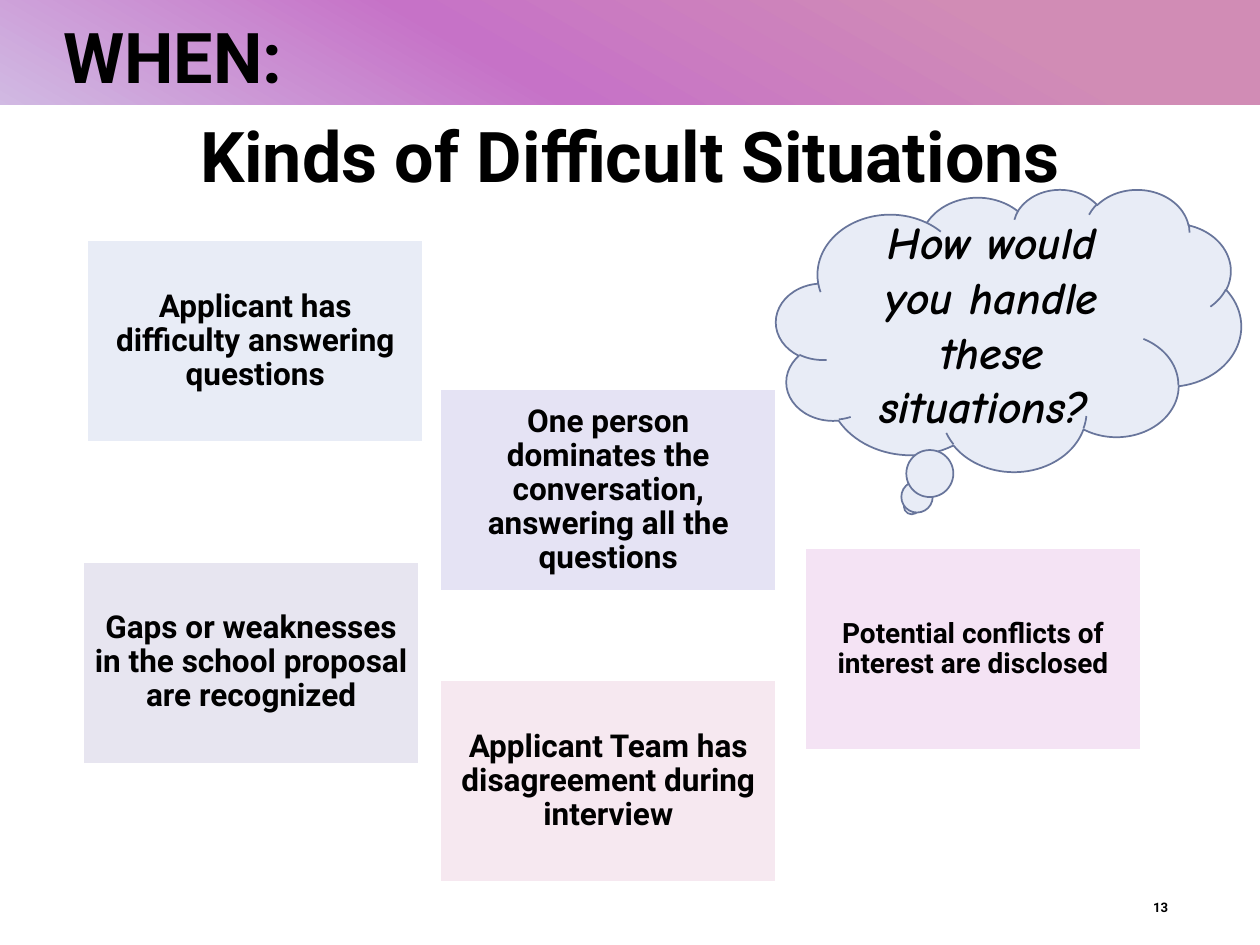
from lxml import etree
from pptx import Presentation
from pptx.dml.color import RGBColor
from pptx.enum.shapes import MSO_SHAPE
from pptx.enum.text import MSO_ANCHOR, MSO_AUTO_SIZE, PP_ALIGN
from pptx.oxml.ns import qn
from pptx.util import Pt

RECT = MSO_SHAPE.RECTANGLE
CLOUD = MSO_SHAPE.CLOUD_CALLOUT
TOP, MIDDLE = MSO_ANCHOR.TOP, MSO_ANCHOR.MIDDLE
LEFT, CENTER, RIGHT = PP_ALIGN.LEFT, PP_ALIGN.CENTER, PP_ALIGN.RIGHT
NO_FIT = MSO_AUTO_SIZE.NONE

WIDTH, HEIGHT = 720, 540
BAND_HEIGHT = 60
CARD_WIDTH, CARD_HEIGHT = 192, 115.2
BAND_STOPS = [(10, "D18CB5"), (30, "C672C7"), (50, "D1BAE3"),
              (70, "7F72C7"), (90, "8C9ED1")]
CARDS = [
    (49.9, 137.5, "E8ECF6", 18, "Applicant has difficulty answering questions"),
    (251.6, 222.5, "E5E3F4", 18,
     "One person dominates the conversation, answering all the questions"),
    (251.6, 388.8, "F6E8F0", 18, "Applicant Team has disagreement during interview"),
    (47.5, 321.1, "E7E5F0", 18,
     "Gaps or weaknesses in the school proposal are recognized"),
    (460, 313.4, "F4E3F4", 16, "Potential conflicts of interest are disclosed"),
]


def color(value):
    return RGBColor.from_string(value)


def add_box(s, kind, x, y, w, h, fill, line=None):
    sp = s.shapes.add_shape(kind, Pt(x), Pt(y), Pt(w), Pt(h))
    sp.shadow.inherit = False
    sp.fill.solid()
    sp.fill.fore_color.rgb = color(fill)
    if line:
        sp.line.color.rgb = color(line)
        sp.line.width = Pt(1)
    else:
        sp.line.fill.background()
    return sp


def set_text(sp, text, size, align=CENTER, anchor=MIDDLE, font="Roboto",
             italic=None, spacing=None, wrap=True):
    tf = sp.text_frame
    tf.word_wrap = wrap
    tf.auto_size = NO_FIT
    tf.vertical_anchor = anchor
    p = tf.paragraphs[0]
    p.alignment = align
    p.line_spacing = spacing
    r = p.add_run()
    r.text = text
    r.font.name = font
    r.font.size = Pt(size)
    r.font.bold = True
    r.font.italic = italic
    r.font.color.rgb = color("000000")


def add_band(s):
    sp = add_box(s, RECT, 0, 0, WIDTH, HEIGHT, "FFFFFF")
    sp.fill.gradient()
    sp.fill.gradient_angle = 240
    stops = sp.element.spPr.find(qn("a:gradFill")).find(qn("a:gsLst"))
    for stop in list(stops):
        stops.remove(stop)
    for position, value in BAND_STOPS:
        stop = etree.SubElement(stops, qn("a:gs"), pos=str(position * 1000))
        etree.SubElement(stop, qn("a:srgbClr"), val=value)
    add_box(s, RECT, 0, BAND_HEIGHT, WIDTH, HEIGHT - BAND_HEIGHT, "FFFFFF")


def add_title(s, text):
    title = s.shapes.title
    title.left, title.top = Pt(29), Pt(60.5)
    title.width, title.height = Pt(662), Pt(75)
    set_text(title, text, 40, anchor=TOP)
    title.element.getparent().append(title.element)


def add_label(s, x, y, w, h, text, size, **style):
    sp = s.shapes.add_textbox(Pt(x), Pt(y), Pt(w), Pt(h))
    set_text(sp, text, size, **style)


def add_card(s, x, y, fill, size, text):
    sp = add_box(s, RECT, x, y, CARD_WIDTH, CARD_HEIGHT, fill, "FFFFFF")
    tf = sp.text_frame
    tf.margin_left = tf.margin_right = Pt(5)
    tf.margin_top = tf.margin_bottom = Pt(5)
    set_text(sp, text, size, spacing=0.9)


def add_cloud(s, text):
    sp = add_box(s, CLOUD, 443.5, 108, 265.7, 161.3, "E8ECF6", "68759B")
    set_text(sp, text, 26, font="Comic Neue", italic=True)


def main():
    prs = Presentation()
    prs.slide_width, prs.slide_height = Pt(WIDTH), Pt(HEIGHT)
    s = prs.slides.add_slide(prs.slide_layouts[5])
    add_band(s)
    add_title(s, "Kinds of Difficult Situations")
    add_label(s, 643.7, 504, 31, 28.8, "13", 7.5, align=RIGHT)
    add_label(s, 29, 4.3, 167, 55.4, "WHEN:", 40,
              align=LEFT, anchor=TOP, wrap=False)
    for card in CARDS:
        add_card(s, *card)
    add_cloud(s, "How would you handle these situations? ")
    prs.save("out.pptx")


if __name__ == "__main__":
    main()
